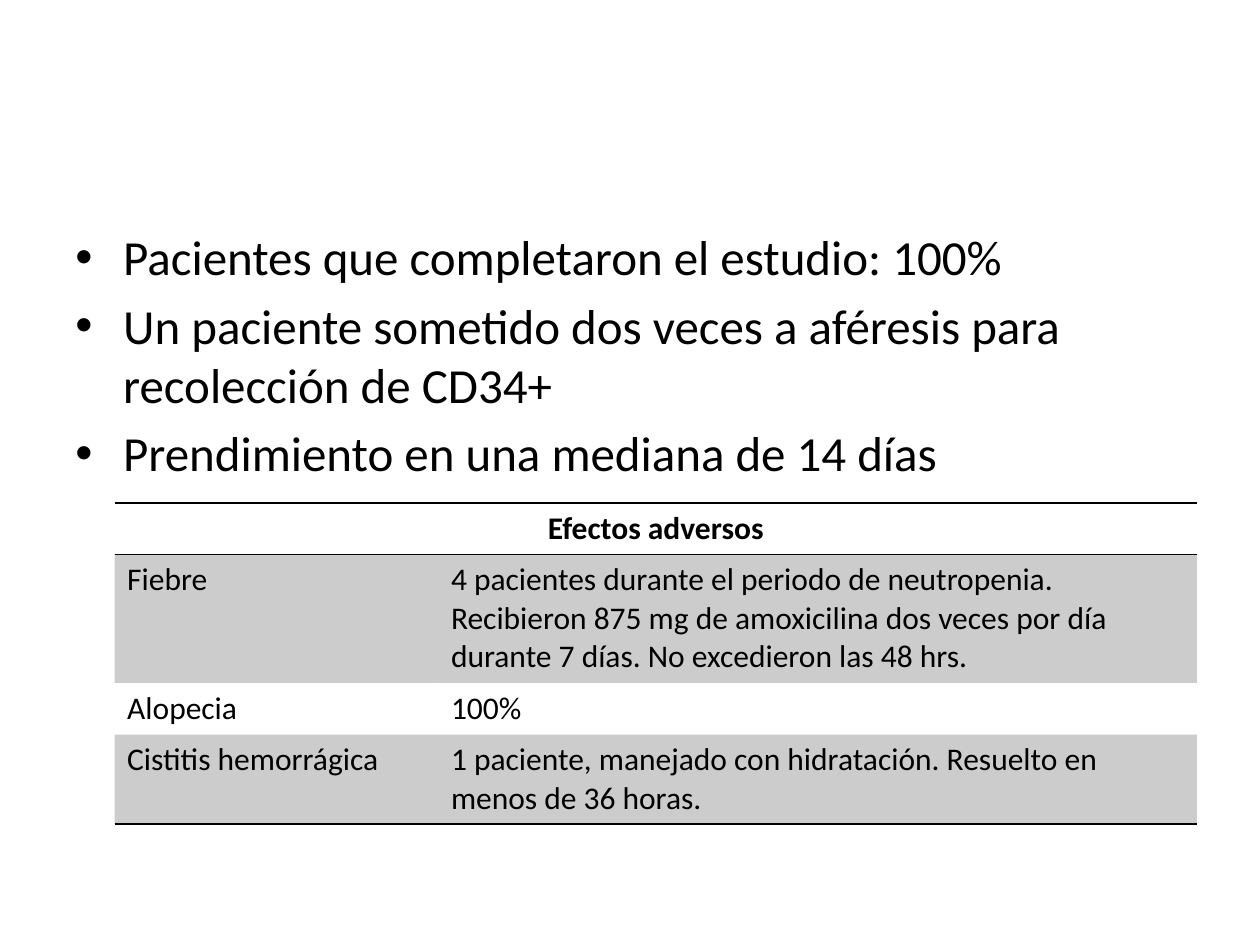
from lxml import etree
from pptx import Presentation
from pptx.dml.color import RGBColor
from pptx.enum.text import PP_ALIGN
from pptx.oxml.ns import qn
from pptx.util import Inches, Pt

BLACK = RGBColor(0, 0, 0)
FONT = "Calibri"
CENTER = PP_ALIGN.CENTER
LEFT = PP_ALIGN.LEFT
PLAIN_TABLE_STYLE = "{2D5ABB26-0587-4C30-8999-92F81FD0307C}"
SLIDE_WIDTH, SLIDE_HEIGHT = Inches(10), Inches(7.5)
BAND_OPACITY = 20
BULLET_INDENT = Inches(0.38)

FINDINGS = [
    "Pacientes que completaron el estudio: 100%",
    "Un paciente sometido dos veces a aféresis para recolección de CD34+",
    "Prendimiento en una mediana de 14 días",
]
TABLE_TITLE = "Efectos adversos"
ADVERSE_EFFECTS = [
    ("Fiebre", "4 pacientes durante el periodo de neutropenia. Recibieron 875 mg de "
               "amoxicilina dos veces por día durante 7 días. No excedieron las 48 hrs."),
    ("Alopecia", "100%"),
    ("Cistitis hemorrágica", "1 paciente, manejado con hidratación. Resuelto en "
                             "menos de 36 horas."),
]
COLUMN_WIDTHS = [2.57, 6.02]
ROW_HEIGHTS = [0.41, 1.02, 0.41, 0.71]


def write(paragraph, text, size, bold=False, alignment=LEFT):
    paragraph.text = text
    paragraph.alignment = alignment
    font = paragraph.runs[0].font
    font.name, font.size, font.bold = FONT, Pt(size), bold
    font.color.rgb = BLACK


def add_bullet(paragraph):
    properties = paragraph._p.get_or_add_pPr()
    properties.set("marL", str(BULLET_INDENT))
    properties.set("indent", str(-BULLET_INDENT))
    etree.SubElement(properties, qn("a:buFont"), typeface="Arial")
    etree.SubElement(properties, qn("a:buChar"), char="•")


def add_bullet_list(slide, items):
    box = slide.shapes.add_textbox(
        SLIDE_WIDTH * 0.05, Inches(1.75), SLIDE_WIDTH * 0.9, SLIDE_HEIGHT * 0.66)
    frame = box.text_frame
    frame.word_wrap = True
    for index, item in enumerate(items):
        paragraph = frame.add_paragraph() if index else frame.paragraphs[0]
        write(paragraph, item, 28)
        paragraph.space_before = Pt(5.6)
        add_bullet(paragraph)


def shade(cell):
    """Fill a cell with translucent black."""
    cell.fill.solid()
    cell.fill.fore_color.rgb = BLACK
    color = cell._tc.tcPr.find(qn("a:solidFill"))[0]
    etree.SubElement(color, qn("a:alpha"), val=str(BAND_OPACITY * 1000))


def add_border(cell, side):
    """Put a rule on side "T" or "B"; add the bottom one first."""
    line = etree.Element(qn(f"a:ln{side}"), w=str(Pt(1)))
    fill = etree.SubElement(line, qn("a:solidFill"))
    etree.SubElement(fill, qn("a:srgbClr"), val=str(BLACK))
    cell._tc.get_or_add_tcPr().insert(0, line)


def add_effects_table(slide):
    rows = [(TABLE_TITLE, "")] + ADVERSE_EFFECTS
    frame = slide.shapes.add_table(
        len(rows), len(COLUMN_WIDTHS), Inches(0.91), Inches(3.99),
        Inches(sum(COLUMN_WIDTHS)), Inches(sum(ROW_HEIGHTS)))
    table = frame.table
    table._tbl.tblPr.find(qn("a:tableStyleId")).text = PLAIN_TABLE_STYLE
    for column, width in zip(table.columns, COLUMN_WIDTHS):
        column.width = Inches(width)
    for row, height in zip(table.rows, ROW_HEIGHTS):
        row.height = Inches(height)
    table.cell(0, 0).merge(table.cell(0, 1))

    last = len(rows) - 1
    for row_index, texts in enumerate(rows):
        header = row_index == 0
        for column_index, text in enumerate(texts):
            cell = table.cell(row_index, column_index)
            if text:
                write(cell.text_frame.paragraphs[0], text, 18, header,
                      CENTER if header else LEFT)
            if row_index % 2:
                shade(cell)
            else:
                cell.fill.background()
            if row_index in (0, last):
                add_border(cell, "B")
            if header:
                add_border(cell, "T")


def main():
    presentation = Presentation()
    presentation.slide_width = SLIDE_WIDTH
    presentation.slide_height = SLIDE_HEIGHT
    slide = presentation.slides.add_slide(presentation.slide_layouts[6])
    add_bullet_list(slide, FINDINGS)
    add_effects_table(slide)
    presentation.save("out.pptx")


if __name__ == "__main__":
    main()
